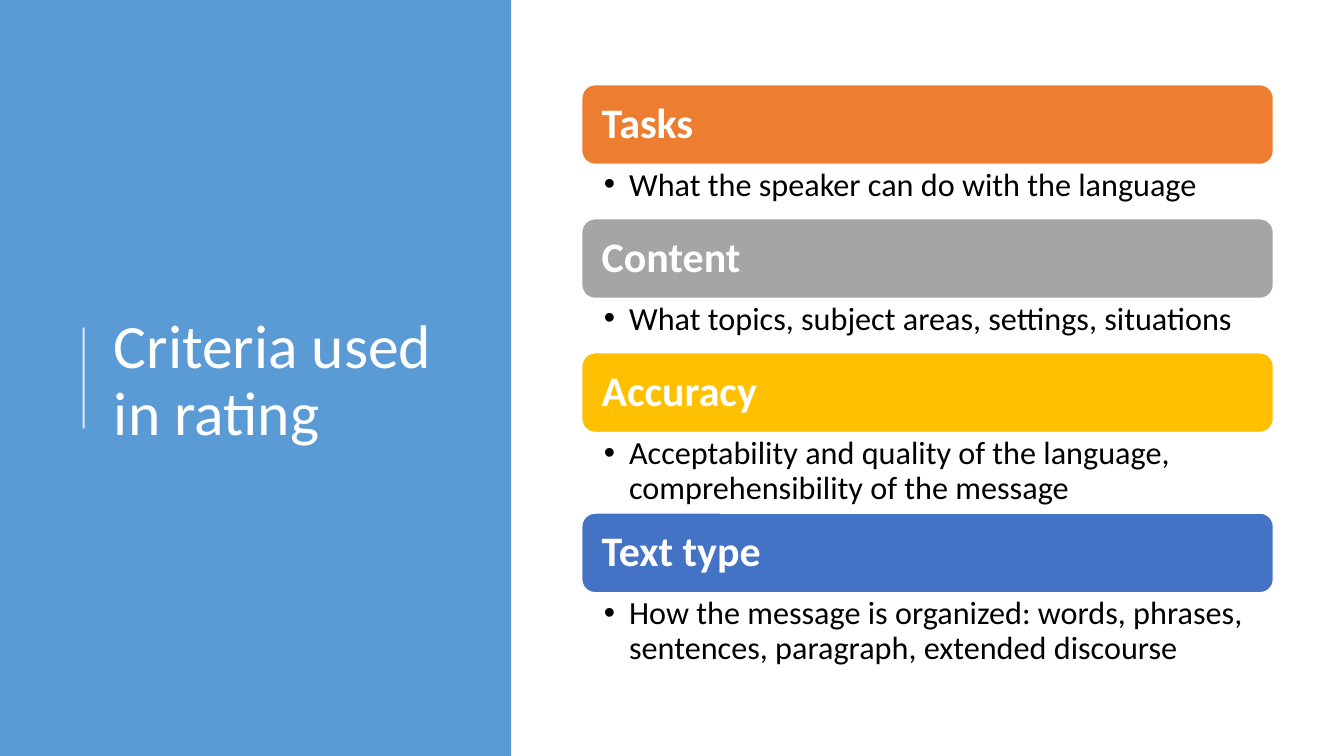
from dataclasses import dataclass

from lxml.etree import SubElement
from pptx import Presentation
from pptx.dml.color import RGBColor
from pptx.enum.shapes import MSO_CONNECTOR, MSO_SHAPE
from pptx.enum.text import MSO_ANCHOR, MSO_AUTO_SIZE, PP_ALIGN
from pptx.oxml.ns import qn
from pptx.util import Inches, Pt


@dataclass(frozen=True)
class Theme:
    font: str = "Calibri"
    panel: str = "5B9BD5"
    white: str = "FFFFFF"
    black: str = "000000"
    accents: tuple = ("ED7D31", "A5A5A5", "FFC000", "4472C4")
    title_size: int = 44
    heading_size: int = 30
    detail_size: int = 23


THEME = Theme()
BAR_HEIGHT = 0.79
# Each criterion: heading, detail, height of the detail box in inches
CRITERIA = (
    ("Tasks", "What the speaker can do with the language", 0.54),
    ("Content", "What topics, subject areas, settings, situations", 0.54),
    ("Accuracy", "Acceptability and quality of the language, "
     "comprehensibility of the message", 0.8),
    ("Text type", "How the message is organized: words, phrases, "
     "sentences, paragraph, extended discourse", 0.8),
)


def set_attributes(target, values):
    for name, value in values.items():
        setattr(target, name, value)


def write_text(shape, text, size, color, insets, bold=False,
               anchor=MSO_ANCHOR.MIDDLE):
    """Fill a shape with one left-aligned paragraph; insets run left, top, right, bottom."""
    frame = shape.text_frame
    frame.text = text
    left, top, right, bottom = map(Inches, insets)
    set_attributes(frame, {
        "word_wrap": True, "auto_size": MSO_AUTO_SIZE.NONE,
        "vertical_anchor": anchor, "margin_left": left, "margin_top": top,
        "margin_right": right, "margin_bottom": bottom,
    })
    paragraph = frame.paragraphs[0]
    set_attributes(paragraph, {"alignment": PP_ALIGN.LEFT, "line_spacing": 0.9})
    font = paragraph.runs[0].font
    set_attributes(font, {"name": THEME.font, "size": Pt(size), "bold": bold})
    font.color.rgb = RGBColor.from_string(color)
    return paragraph


def add_filled_shape(slide, kind, box, color):
    shape = slide.shapes.add_shape(kind, *map(Inches, box))
    shape.shadow.inherit = False
    shape.fill.solid()
    shape.fill.fore_color.rgb = RGBColor.from_string(color)
    shape.line.fill.background()
    return shape


def add_bullet(paragraph):
    properties = paragraph._p.get_or_add_pPr()
    properties.set("marL", str(Inches(0.25)))
    properties.set("indent", str(-Inches(0.25)))
    SubElement(properties, qn("a:buFont"), typeface="Arial")
    SubElement(properties, qn("a:buChar"), char="•")


def add_title_rule(slide, left, top, height):
    rule = slide.shapes.add_connector(
        MSO_CONNECTOR.STRAIGHT, *map(Inches, (left, top + height, left, top)))
    rule.line.width = Pt(1.5)
    rule.line.color.rgb = RGBColor.from_string(THEME.white)
    SubElement(rule.element.spPr, qn("a:effectLst"))
    color = next(rule.element.iter(qn("a:srgbClr")))
    SubElement(color, qn("a:alpha"), val="80000")


def add_title_panel(slide, text, box):
    left, top, width, height = box
    panel = add_filled_shape(slide, MSO_SHAPE.RECTANGLE, box, THEME.panel)
    title = slide.shapes.title
    title.element.addprevious(panel.element)
    set_attributes(title, {
        "left": Inches(left + 1.03), "top": Inches(top + 0.78),
        "width": Inches(width - 1.38), "height": Inches(height - 1.48),
    })
    write_text(title, text, THEME.title_size, THEME.white, (0.1, 0.05, 0.1, 0.05))
    add_title_rule(slide, left + 0.83, top + (height - 1) / 2, 1)


def add_criterion(slide, heading, detail, color, box):
    left, top, width, height = box
    bar = add_filled_shape(slide, MSO_SHAPE.ROUNDED_RECTANGLE,
                           (left, top, width, BAR_HEIGHT), color)
    bar.line.width = Pt(1)
    bar.line.color.rgb = RGBColor.from_string(THEME.white)
    write_text(bar, heading, THEME.heading_size, THEME.white,
               (0.16, 0.12, 0.16, 0.12), bold=True)
    detail_box = slide.shapes.add_textbox(*map(Inches, (
        left, top + BAR_HEIGHT, width, height - BAR_HEIGHT)))
    paragraph = write_text(detail_box, detail, THEME.detail_size, THEME.black,
                           (0.22, 0.04, 0.23, 0.04), anchor=MSO_ANCHOR.TOP)
    add_bullet(paragraph)


def add_criteria_list(slide, criteria, left, top, width):
    for (heading, detail, detail_height), color in zip(criteria, THEME.accents):
        height = BAR_HEIGHT + detail_height
        add_criterion(slide, heading, detail, color, (left, top, width, height))
        top += height


def main():
    presentation = Presentation()
    set_attributes(presentation, {
        "slide_width": Inches(13.33), "slide_height": Inches(7.5)})
    slide = presentation.slides.add_slide(
        presentation.slide_layouts.get_by_name("Title Only"))
    add_title_panel(slide, "Criteria used in rating", (0, 0, 5.07, 7.5))
    add_criteria_list(slide, CRITERIA, 5.77, 0.84, 6.86)
    presentation.save("out.pptx")


if __name__ == "__main__":
    main()
